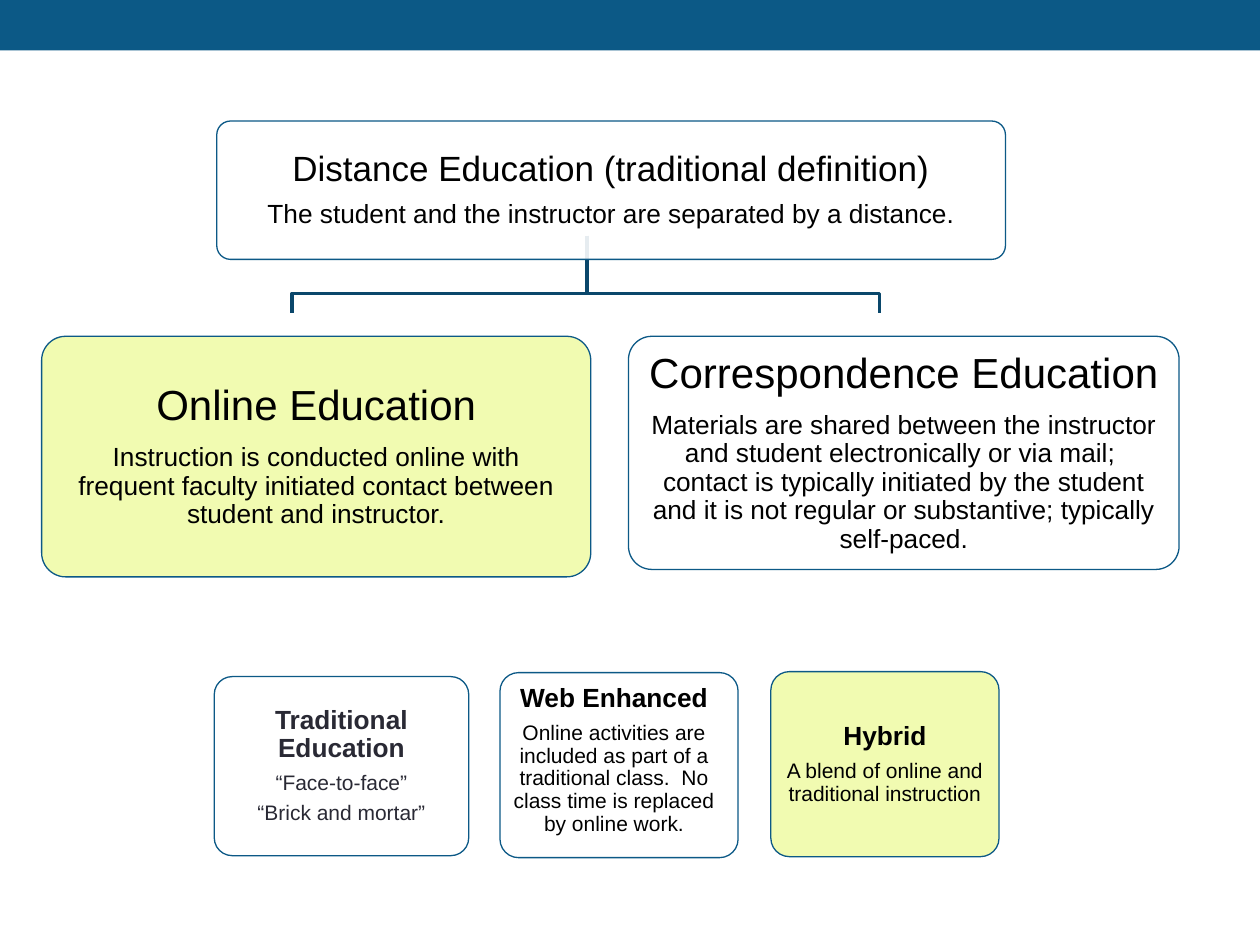
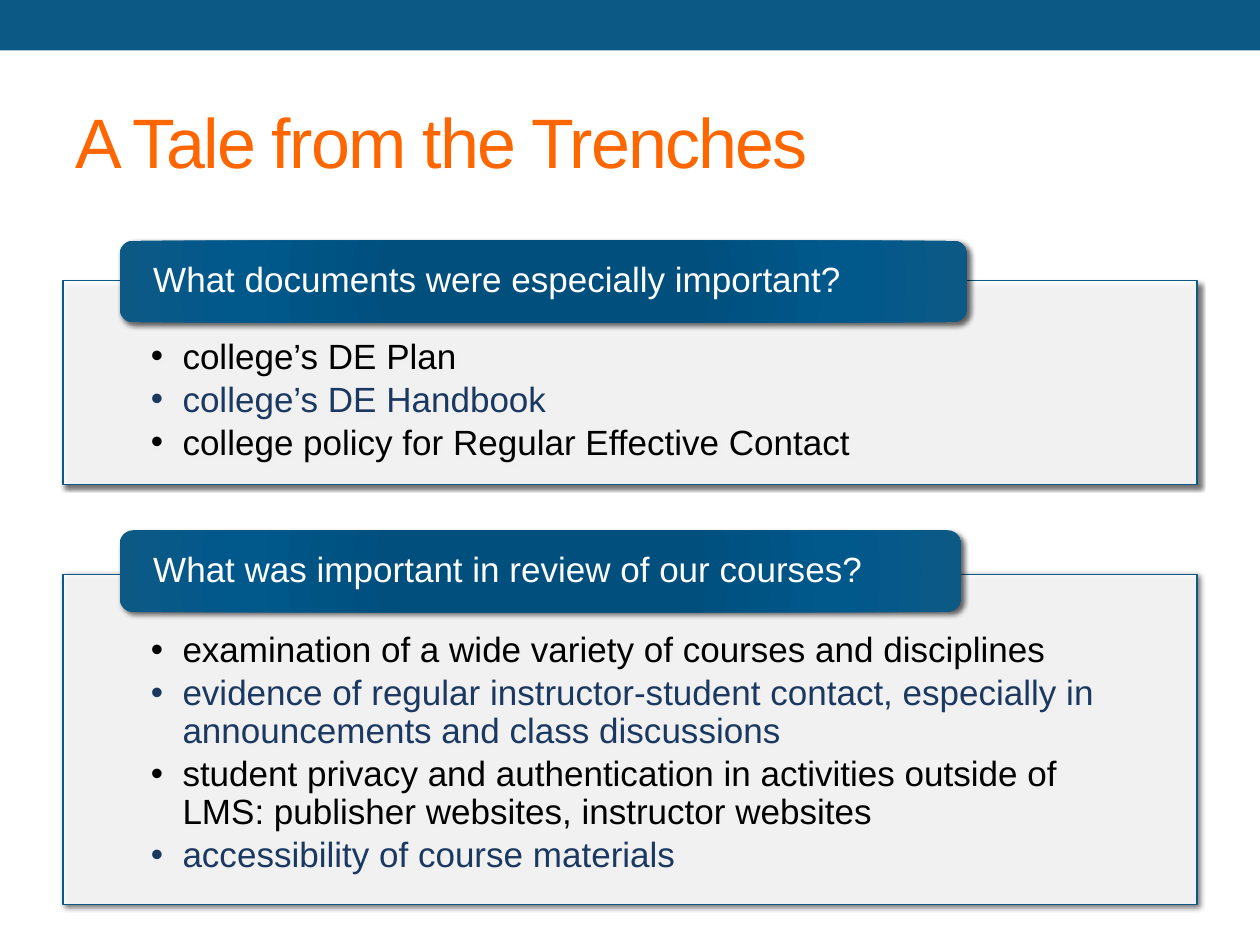
"""Build two slides on distance education: a tree of definitions and a review summary."""
from pptx import Presentation
from pptx.dml.color import RGBColor
from pptx.enum.shapes import MSO_SHAPE as Preset
from pptx.enum.text import MSO_ANCHOR as Anchor, PP_ALIGN as Align
from pptx.oxml import parse_xml
from pptx.oxml.ns import nsdecls, qn
from pptx.util import Cm, Pt

BLUE = RGBColor(0x0C, 0x59, 0x86)
BRANCH_BLUE = RGBColor(0x0A, 0x47, 0x6B)
DARK_BLUE = RGBColor(0x00, 0x4F, 0x7D)
MID_BLUE = RGBColor(0x00, 0x58, 0x8B)
NAVY = RGBColor(0x1B, 0x38, 0x61)
ORANGE = RGBColor(0xFF, 0x66, 0x00)
LIME = RGBColor(0xF1, 0xFB, 0xB1)
CHARCOAL = RGBColor(0x29, 0x29, 0x34)
BLACK = RGBColor(0x00, 0x00, 0x00)
WHITE = RGBColor(0xFF, 0xFF, 0xFF)

FONT = "Arial"
SLIDE_WIDTH, SLIDE_HEIGHT = 25.4, 19.05
MARGIN = 1.27
CONTENT_WIDTH = SLIDE_WIDTH - 2 * MARGIN
HEADER_LEFT, HEADER_HEIGHT = 2.41, 1.65
HEADER_STOPS = [(0, DARK_BLUE), (34, DARK_BLUE), (70, MID_BLUE), (100, BLUE)]

DEFINITIONS = [
    {"box": (4.37, 2.44, 15.9, 2.79), "insets": (0.2,) * 4, "sizes": (20, 15),
     "texts": ["Distance Education (traditional definition)",
               "The student and the instructor are separated by a distance."]},
    {"box": (0.84, 6.78, 11.07, 4.85), "insets": (0.25,) * 4, "sizes": (24, 15),
     "fill": LIME,
     "texts": ["Online Education",
               "Instruction is conducted online with frequent faculty initiated "
               "contact between student and instructor."]},
    {"box": (12.67, 6.78, 11.1, 4.7), "insets": (0.25,) * 4, "sizes": (24, 15),
     "texts": ["Correspondence Education",
               "Materials are shared between the instructor and student "
               "electronically or via mail;  contact is typically initiated by the "
               "student and it is not regular or substantive; typically self-paced."]},
    {"box": (15.54, 13.54, 4.6, 3.73), "insets": (0.15,) * 4, "sizes": (15, 12),
     "fill": LIME, "bold": True,
     "texts": ["Hybrid", "A blend of online and traditional instruction"]},
    {"box": (10.08, 13.56, 4.8, 3.73), "insets": (0.05, 0.05, 0.25, 0.25),
     "sizes": (15, 12), "bold": True,
     "texts": ["Web Enhanced",
               "Online activities are included as part of a traditional class.  "
               "No class time is replaced by online work."]},
    {"box": (4.32, 13.64, 5.13, 3.61), "insets": (0.13,) * 4, "sizes": (15, 12),
     "bold": True, "color": CHARCOAL,
     "texts": ["Traditional Education", "“Face-to-face”", "“Brick and mortar”"]},
]

QUESTIONS = [
    {"header": "What documents were especially important?",
     "header_top": 4.85, "header_width": 17.09, "top": 5.66, "height": 4.11,
     "answers": ["college’s DE Plan", "college’s DE Handbook",
                 "college policy for Regular Effective Contact"]},
    {"header": "What was important in review of our courses?",
     "header_top": 10.69, "header_width": 16.97, "top": 11.58, "height": 6.65,
     "answers": ["examination of a wide variety of courses and disciplines",
                 "evidence of regular instructor-student contact, especially in "
                 "announcements and class discussions",
                 "student privacy and authentication in activities outside of LMS: "
                 "publisher websites, instructor websites",
                 "accessibility of course materials"]},
]


def apply_format(target, values):
    """Set every attribute named in values on the target."""
    for name, value in values.items():
        setattr(target, name, value)


def add_box(slide, preset, box, fill, line=None, opacity=100):
    """Add a filled preset shape without a shadow."""
    shape = slide.shapes.add_shape(preset, *map(Cm, box))
    shape.shadow.inherit = False
    shape.fill.solid()
    shape.fill.fore_color.rgb = fill
    if opacity < 100:
        color = shape._element.spPr.find(qn("a:solidFill"))[0]
        color.append(parse_xml(f'<a:alpha {nsdecls("a")} val="{opacity * 1000}"/>'))
    if line is None:
        shape.line.fill.background()
    else:
        shape.line.color.rgb = line
        shape.line.width = Pt(0.75)
    return shape


def add_shadow(shape):
    """Give the shape a soft shadow to the lower right."""
    shape._element.spPr.find(qn("a:effectLst")).append(parse_xml(
        f'<a:outerShdw {nsdecls("a")} blurRad="{Pt(3)}" dist="{Pt(2)}" dir="2700000" '
        'rotWithShape="0"><a:srgbClr val="000000"><a:alpha val="60000"/></a:srgbClr>'
        '</a:outerShdw>'))


def set_radial_gradient(shape, stops):
    """Replace the solid fill by a circular gradient."""
    stop_xml = "".join(f'<a:gs pos="{position * 1000}"><a:srgbClr val="{color}"/></a:gs>'
                       for position, color in stops)
    gradient = parse_xml(
        f'<a:gradFill {nsdecls("a")} rotWithShape="1"><a:gsLst>{stop_xml}</a:gsLst>'
        '<a:path path="circle"><a:fillToRect l="100000" t="100000" r="100000" b="100000"/>'
        '</a:path></a:gradFill>')
    properties = shape._element.spPr
    properties.replace(properties.find(qn("a:solidFill")), gradient)


def set_frame(shape, insets, anchor):
    """Set the insets, wrapping and anchor of a shape's text and return its frame."""
    frame = shape.text_frame
    left, top, right, bottom = map(Cm, insets)
    apply_format(frame, {"margin_left": left, "margin_top": top, "margin_right": right,
                         "margin_bottom": bottom, "word_wrap": True,
                         "vertical_anchor": anchor})
    return frame


def write_paragraph(frame, index, text, size, color, align=Align.LEFT, after=0.35, bold=False):
    """Write one paragraph, with space after it as a share of the text size."""
    paragraph = frame.add_paragraph() if index else frame.paragraphs[0]
    apply_format(paragraph, {"alignment": align, "line_spacing": 0.9,
                             "space_before": Pt(0), "space_after": Pt(size * after)})
    run = paragraph.add_run()
    run.text = text
    apply_format(run.font, {"name": FONT, "size": Pt(size), "bold": bold})
    run.font.color.rgb = color
    return paragraph


def add_bullet(paragraph):
    """Give the paragraph a round bullet and a hanging indent."""
    properties = paragraph._p.get_or_add_pPr()
    indent = Cm(0.64)
    properties.set("marL", str(indent))
    properties.set("indent", str(-indent))
    properties.append(parse_xml(f'<a:buFont {nsdecls("a")} typeface="{FONT}"/>'))
    properties.append(parse_xml(f'<a:buChar {nsdecls("a")} char="•"/>'))


def add_band(slide):
    """Add the blue band along the top edge."""
    add_box(slide, Preset.RECTANGLE, (0, 0, SLIDE_WIDTH, 1.02), BLUE)


def add_title(slide, text):
    """Place and format the title placeholder."""
    title = slide.shapes.title
    apply_format(title, {"left": Cm(MARGIN), "top": Cm(1.47),
                         "width": Cm(CONTENT_WIDTH), "height": Cm(2.74)})
    frame = set_frame(title, (0.25, 0.13, 0.25, 0.13), Anchor.MIDDLE)
    paragraph = write_paragraph(frame, 0, text, 40, ORANGE, after=0)
    paragraph.line_spacing = 1.0
    paragraph.runs[0]._r.get_or_add_rPr().set("spc", "-100")


def add_branch(slide, end_x):
    """Add an elbow line from the top definition down to end_x."""
    start_x, start_y, bend_y, end_y = 11.84, 4.75, 5.92, 6.32
    builder = slide.shapes.build_freeform(Cm(start_x), Cm(start_y))
    corners = [(start_x, bend_y), (end_x, bend_y), (end_x, end_y)]
    builder.add_line_segments([(Cm(x), Cm(y)) for x, y in corners], close=False)
    branch = builder.convert_to_shape()
    branch.shadow.inherit = False
    branch.fill.background()
    branch.line.color.rgb = BRANCH_BLUE
    branch.line.width = Pt(2.08)


def add_definition(slide, box, insets, sizes, texts, fill=None, bold=False, color=BLACK):
    """Add a rounded box with a heading and its explanation."""
    opacity = 100 if fill else 90
    shape = add_box(slide, Preset.ROUNDED_RECTANGLE, box, fill or WHITE, BLUE, opacity)
    shape.adjustments[0] = 0.1
    frame = set_frame(shape, insets, Anchor.MIDDLE)
    for index, text in enumerate(texts):
        write_paragraph(frame, index, text, sizes[min(index, 1)], color,
                        Align.CENTER, bold=bold and index == 0)


def add_question(slide, header, header_top, header_width, top, height, answers):
    """Add a panel of bulleted answers with its question on the top edge."""
    panel = add_box(slide, Preset.RECTANGLE, (MARGIN, top, CONTENT_WIDTH, height),
                    WHITE, BLUE, 90)
    add_shadow(panel)
    frame = set_frame(panel, (1.77, 1.17, 1.77, 0.41), Anchor.TOP)
    for index, answer in enumerate(answers):
        color = NAVY if index % 2 else BLACK
        add_bullet(write_paragraph(frame, index, answer, 20, color, after=0.15))
    label = add_box(slide, Preset.ROUNDED_RECTANGLE,
                    (HEADER_LEFT, header_top, header_width, HEADER_HEIGHT), BLUE)
    set_radial_gradient(label, HEADER_STOPS)
    add_shadow(label)
    write_paragraph(set_frame(label, (0.6, 0, 0.6, 0), Anchor.MIDDLE), 0, header, 20, WHITE)


def main():
    """Build and save the presentation."""
    presentation = Presentation()
    apply_format(presentation, {"slide_width": Cm(SLIDE_WIDTH),
                                "slide_height": Cm(SLIDE_HEIGHT)})
    title_only, blank = presentation.slide_layouts[5], presentation.slide_layouts[6]

    slide = presentation.slides.add_slide(blank)
    add_band(slide)
    for end_x in (17.73, 5.89):
        add_branch(slide, end_x)
    for definition in DEFINITIONS:
        add_definition(slide, **definition)

    slide = presentation.slides.add_slide(title_only)
    add_band(slide)
    add_title(slide, "A Tale from the Trenches")
    for question in QUESTIONS:
        add_question(slide, **question)

    presentation.save("out.pptx")


if __name__ == "__main__":
    main()
